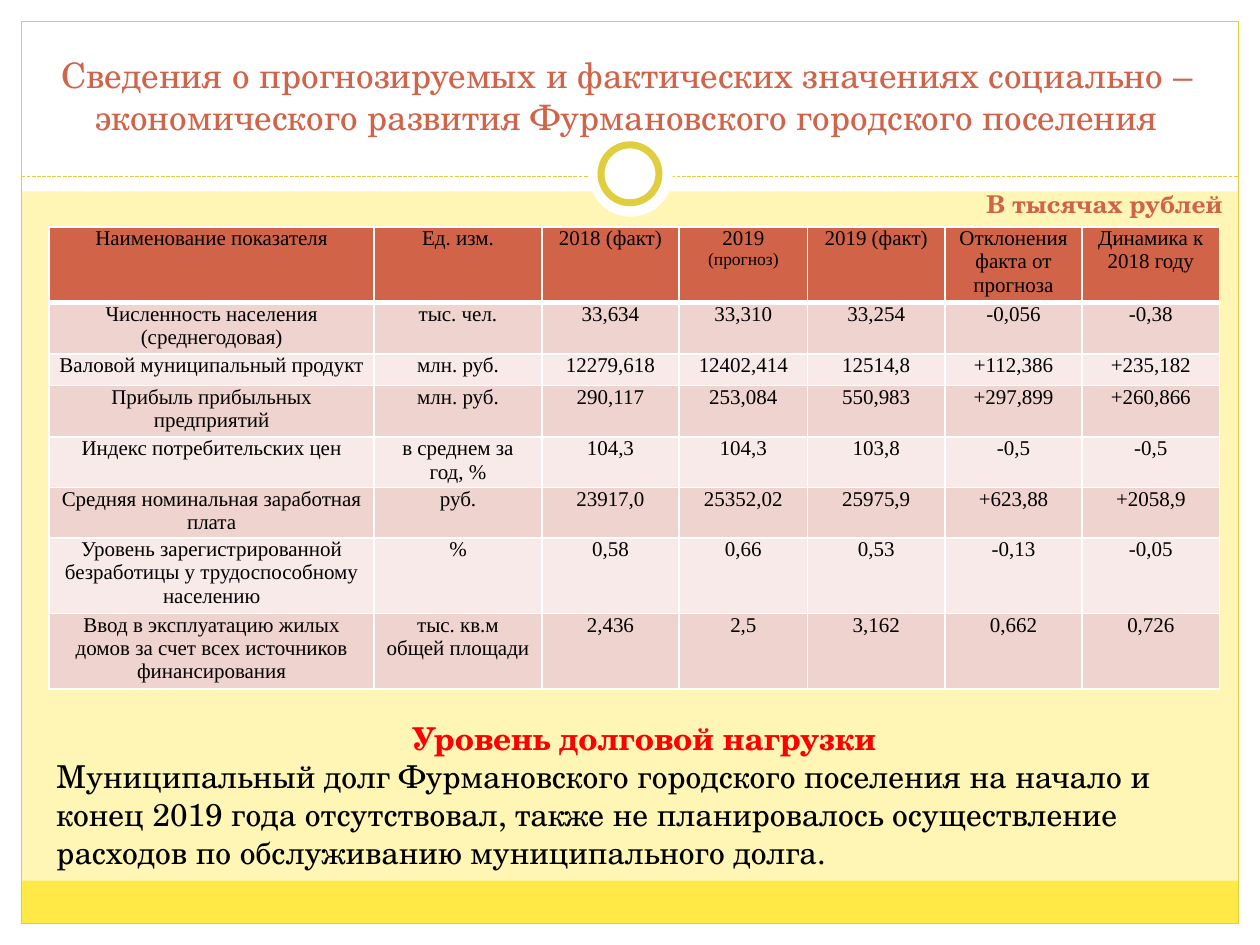
from dataclasses import dataclass

from pptx import Presentation
from pptx.dml.color import RGBColor
from pptx.enum.dml import MSO_LINE_DASH_STYLE as DASH
from pptx.enum.shapes import MSO_CONNECTOR, MSO_SHAPE
from pptx.enum.text import MSO_ANCHOR, MSO_AUTO_SIZE, PP_ALIGN
from pptx.oxml.ns import qn
from pptx.util import Inches, Pt
from lxml.etree import SubElement


@dataclass(frozen=True)
class Theme:
    background: str = "FFF6B5"
    white: str = "FFFFFF"
    band: str = "FFE947"
    gold: str = "E1CE3F"
    accent: str = "D16349"
    alert: str = "FF0000"
    ink: str = "000000"
    row_fills: tuple = ("F7EAE9", "EED3CF")
    font: str = "TeX Gyre Schola"
    table_font: str = "Times New Roman"
    title_size: int = 20
    body_size: int = 18
    unit_size: int = 14
    cell_size: int = 12
    small_size: int = 10


T = Theme()

TITLE = ("Сведения о прогнозируемых и фактических значениях социально – "
         "экономического развития Фурмановского городского поселения")
DEBT = ("Муниципальный долг Фурмановского городского поселения на начало и конец "
        "2019 года отсутствовал, также не планировалось осуществление расходов "
        "по обслуживанию муниципального долга.")
COLUMNS = [2.58, 1.33, 1.09, 1.02, 1.09, 1.09, 1.09]
# Each row is tall enough for its longest cell
ROWS = [0.6, 0.41, 0.25, 0.41, 0.4, 0.4, 0.6, 0.6]
INDICATORS = [
    ["Наименование показателя", "Ед. изм.", "2018 (факт)", "2019 ", "2019 (факт)",
     "Отклонения факта от прогноза", "Динамика к 2018 году"],
    ["Численность населения (среднегодовая)", "тыс. чел.",
     "33,634", "33,310", "33,254", "-0,056", "-0,38"],
    ["Валовой муниципальный продукт", "млн. руб.",
     "12279,618", "12402,414", "12514,8", "+112,386", "+235,182"],
    ["Прибыль прибыльных предприятий", "млн. руб.",
     "290,117", "253,084", "550,983", "+297,899", "+260,866"],
    ["Индекс потребительских цен", "в среднем за год, %",
     "104,3", "104,3", "103,8", "-0,5", "-0,5"],
    ["Средняя номинальная заработная плата", "руб.",
     "23917,0", "25352,02", "25975,9", "+623,88", "+2058,9"],
    ["Уровень зарегистрированной безработицы у трудоспособному населению", "%",
     "0,58", "0,66", "0,53", "-0,13", "-0,05"],
    ["Ввод в эксплуатацию жилых домов за счет всех источников финансирования",
     "тыс. кв.м\nобщей площади", "2,436", "2,5", "3,162", "0,662", "0,726"],
]


def rgb(color):
    return RGBColor.from_string(color)


def add_run(p, text, size=T.body_size, color=T.ink, font=T.font, bold=False,
            align=PP_ALIGN.LEFT):
    p.alignment = align
    r = p.add_run()
    r.text = text
    r.font.size = Pt(size)
    r.font.name = font
    r.font.bold = bold
    r.font.color.rgb = rgb(color)


def add_block(s, kind, *box, fill=None, line=None, width=0.75):
    sp = s.shapes.add_shape(kind, *map(Inches, box))
    sp.shadow.inherit = False
    if fill:
        sp.fill.solid()
        sp.fill.fore_color.rgb = rgb(fill)
    else:
        sp.fill.background()
    if line:
        sp.line.color.rgb = rgb(line)
        sp.line.width = Pt(width)
    else:
        sp.line.fill.background()


def add_textbox(s, *box):
    tf = s.shapes.add_textbox(*map(Inches, box)).text_frame
    tf.word_wrap = True
    return tf


def add_decor(s):
    s.background.fill.solid()
    s.background.fill.fore_color.rgb = rgb(T.background)
    rect, oval = MSO_SHAPE.RECTANGLE, MSO_SHAPE.OVAL
    margins = [(0, 7.33, 10, 0.17), (0, 0, 10, 1.52), (0, 0, 0.17, 7.5), (9.83, 0, 0.17, 7.5)]
    for box in margins:
        add_block(s, rect, *box, fill=T.white)
    add_block(s, rect, 0.17, 6.99, 9.66, 0.34, fill=T.band)
    add_block(s, rect, 0.17, 0.17, 9.66, 7.16, line=T.gold)
    rule = s.shapes.add_connector(MSO_CONNECTOR.STRAIGHT, Inches(0.17), Inches(1.4),
                                  Inches(9.83), Inches(1.4))
    rule.line.color.rgb = rgb(T.gold)
    rule.line.width = Pt(0.75)
    rule.line.dash_style = DASH.SQUARE_DOT
    SubElement(rule.element.spPr, qn("a:effectLst"))
    add_block(s, oval, 4.67, 1.05, 0.67, 0.67, fill=T.white)
    add_block(s, oval, 4.77, 1.15, 0.46, 0.46, fill=T.white, line=T.gold, width=4)


def add_title(s):
    title = s.shapes.title
    title.left, title.top, title.width, title.height = map(Inches, (0.31, 0.31, 9.33, 0.83))
    # Bring the title in front of the white margins
    title.element.getparent().append(title.element)
    tf = title.text_frame
    tf.word_wrap = True
    tf.auto_size = MSO_AUTO_SIZE.NONE
    tf.vertical_anchor = MSO_ANCHOR.BOTTOM
    add_run(tf.paragraphs[0], TITLE, size=T.title_size, color=T.accent, align=PP_ALIGN.CENTER)


def set_borders(cell, top=1, bottom=1):
    tc_pr = cell._tc.get_or_add_tcPr()
    for side, width in (("L", 1), ("R", 1), ("T", top), ("B", bottom)):
        ln = SubElement(tc_pr, qn(f"a:ln{side}"), w=str(Pt(width)))
        SubElement(SubElement(ln, qn("a:solidFill")), qn("a:srgbClr"), val=T.white)


def fill_cell(cell, text, fill):
    cell.fill.solid()
    cell.fill.fore_color.rgb = rgb(fill)
    cell.margin_left = cell.margin_right = Inches(0.07)
    cell.margin_top = cell.margin_bottom = 0
    tf = cell.text_frame
    for i, line in enumerate(text.split("\n")):
        p = tf.add_paragraph() if i else tf.paragraphs[0]
        add_run(p, line, size=T.cell_size, font=T.table_font, align=PP_ALIGN.CENTER)


def add_indicator_table(s):
    table = s.shapes.add_table(len(ROWS), len(COLUMNS),
                               *map(Inches, (0.39, 1.8, 9.3, sum(ROWS)))).table
    for column, width in zip(table.columns, COLUMNS):
        column.width = Inches(width)
    for row, height in zip(table.rows, ROWS):
        row.height = Inches(height)
    for i, values in enumerate(INDICATORS):
        fill = T.row_fills[i % 2] if i else T.accent
        for j, text in enumerate(values):
            cell = table.cell(i, j)
            set_borders(cell, top=3 if i == 1 else 1, bottom=3 if i == 0 else 1)
            fill_cell(cell, text, fill)
    add_run(table.cell(0, 3).text_frame.paragraphs[0], "(прогноз)", size=T.small_size,
            font=T.table_font, align=PP_ALIGN.CENTER)


def add_debt_note(s):
    tf = add_textbox(s, 0.35, 5.66, 9.53, 1.31)
    tf.auto_size = MSO_AUTO_SIZE.SHAPE_TO_FIT_TEXT
    add_run(tf.paragraphs[0], "Уровень долговой нагрузки", color=T.alert, bold=True,
            align=PP_ALIGN.CENTER)
    add_run(tf.add_paragraph(), DEBT)


def add_unit_label(s):
    tf = add_textbox(s, 7.73, 1.45, 2.27, 0.35)
    add_run(tf.paragraphs[0], "В тысячах рублей", size=T.unit_size, color=T.accent, bold=True)


def main():
    prs = Presentation()
    prs.slide_width, prs.slide_height = Inches(10), Inches(7.5)
    s = prs.slides.add_slide(prs.slide_layouts[5])
    add_decor(s)
    add_title(s)
    add_indicator_table(s)
    add_debt_note(s)
    add_unit_label(s)
    prs.save("out.pptx")


if __name__ == "__main__":
    main()
